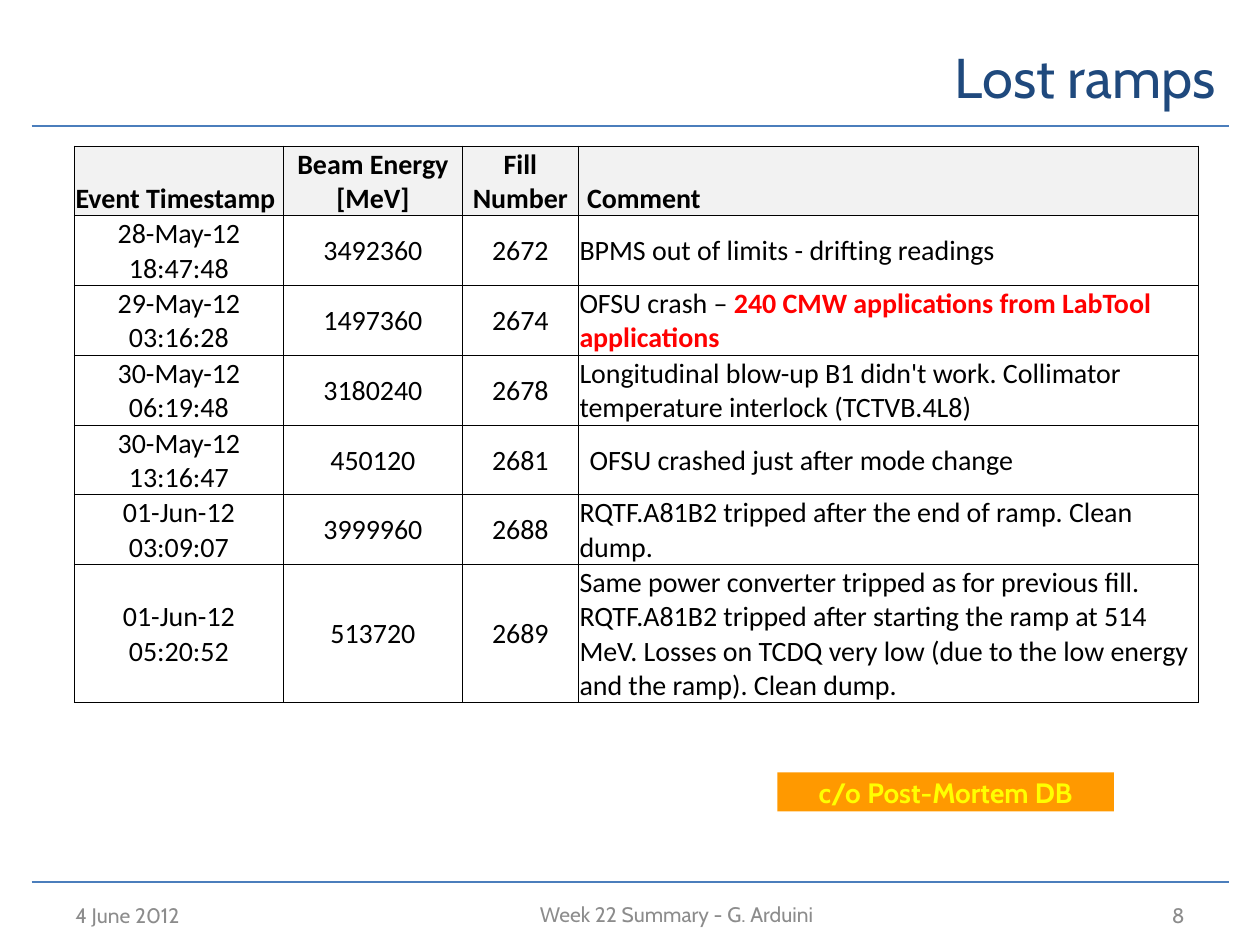
"""Builds the Lost ramps slide: a table of lost beam ramps with a source tag."""
from lxml.etree import SubElement
from pptx import Presentation
from pptx.dml.color import RGBColor as Color
from pptx.enum.shapes import MSO_CONNECTOR as Connector, MSO_SHAPE as Shape
from pptx.enum.text import MSO_ANCHOR as Anchor, PP_ALIGN as Align
from pptx.oxml import parse_xml
from pptx.oxml.ns import nsdecls, qn
from pptx.util import Inches, Pt

COLORS = {"title": "1F497D", "rule": "4B7EBC", "footer": "8C8C8C", "tag": "FF9900",
          "tag_text": "FFFF00", "header": "F2F2F2", "text": "000000", "alert": "FF0000"}
COLUMNS = [1.66, 1.42, 0.92, 4.92]
ROWS = [0.55] * 6 + [1.09]
HEADINGS = ["Event Timestamp", "Beam Energy [MeV]", "Fill Number", "Comment"]
EVENTS = [
    ["28-May-12 18:47:48", "3492360", "2672", "BPMS out of limits - drifting readings"],
    ["29-May-12 03:16:28", "1497360", "2674", "OFSU crash – "],
    ["30-May-12 06:19:48", "3180240", "2678",
     "Longitudinal blow-up B1 didn't work. Collimator temperature interlock (TCTVB.4L8)"],
    ["30-May-12 13:16:47", "450120", "2681", "OFSU crashed just after mode change"],
    ["01-Jun-12 03:09:07", "3999960", "2688",
     "RQTF.A81B2 tripped after the end of ramp. Clean dump."],
    ["01-Jun-12 05:20:52", "513720", "2689",
     "Same power converter tripped as for previous fill. RQTF.A81B2 tripped after starting "
     "the ramp at 514 MeV. Losses on TCDQ very low (due to the low energy and the ramp). "
     "Clean dump."],
]
ALERT = "240 CMW applications from LabTool applications"
INDENTS = {(0, 3): 0.07, (4, 3): 0.09}


def style(span, size, face, color, bold=False):
    """Format one run."""
    span.font.size, span.font.name, span.font.bold = Pt(size), face, bold
    span.font.color.rgb = Color.from_string(COLORS[color])


def write(box, text, size, color, align, bold=False):
    """Put one formatted line into a shape, centred vertically."""
    frame = box.text_frame
    frame.word_wrap = True
    frame.vertical_anchor = Anchor.MIDDLE
    frame.margin_top = frame.margin_bottom = 0
    para = frame.paragraphs[0]
    para.text, para.alignment = text, align
    style(para.runs[0], size, "Cabin", color, bold)


deck = Presentation()
deck.slide_width, deck.slide_height = Inches(10), Inches(7.5)
page = deck.slides.add_slide(deck.slide_layouts[6])

for height in (1, 7):
    rule = page.shapes.add_connector(
        Connector.STRAIGHT, Inches(0.25), Inches(height), Inches(9.75), Inches(height))
    rule.line.color.rgb = Color.from_string(COLORS["rule"])
    rule.line.width = Pt(1.5)
    SubElement(rule._element.spPr, qn("a:effectLst"))

table = page.shapes.add_table(
    len(ROWS), len(COLUMNS), Inches(0.59), Inches(1.16),
    Inches(sum(COLUMNS)), Inches(sum(ROWS))).table
for column, width in zip(table.columns, COLUMNS):
    column.width = Inches(width)
for row, height in zip(table.rows, ROWS):
    row.height = Inches(height)

for r, record in enumerate([HEADINGS] + EVENTS):
    for c, text in enumerate(record):
        cell = table.cell(r, c)
        cell.margin_left = Inches(INDENTS.get((r, c), 0.01))
        cell.margin_right = cell.margin_top = Inches(0.01)
        cell.margin_bottom = 0
        cell.vertical_anchor = Anchor.MIDDLE if r else Anchor.BOTTOM
        for side in ("lnL", "lnR", "lnT", "lnB"):
            cell._tc.get_or_add_tcPr().append(parse_xml(
                f'<a:{side} {nsdecls("a")} w="{Pt(0.5)}"><a:solidFill>'
                f'<a:srgbClr val="{COLORS["text"]}"/></a:solidFill></a:{side}>'))
        if r:
            cell.fill.background()
        else:
            cell.fill.solid()
            cell.fill.fore_color.rgb = Color.from_string(COLORS["header"])
        para = cell.text_frame.paragraphs[0]
        para.text = text
        para.alignment = Align.CENTER if c in (1, 2) or (r and c == 0) else Align.LEFT
        style(para.runs[0], 16, "Calibri", "text", r == 0)

alert = table.cell(2, 3).text_frame.paragraphs[0].add_run()
alert.text = ALERT
style(alert, 16, "Calibri", "alert", True)

for text, left, top, width, height, size, color, align in [
    ("Lost ramps", 1.75, 0.17, 8, 0.87, 32, "title", Align.RIGHT),
    ("4 June 2012", 0.5, 7.17, 2.33, 0.18, 12, "footer", Align.LEFT),
    ("Week 22 Summary - G. Arduini", 1.83, 7.17, 7.08, 0.17, 12, "footer", Align.CENTER),
    ("8", 7.17, 7.17, 2.33, 0.18, 12, "footer", Align.RIGHT),
]:
    box = page.shapes.add_textbox(Inches(left), Inches(top), Inches(width), Inches(height))
    write(box, text, size, color, align)

tag = page.shapes.add_shape(
    Shape.RECTANGLE, Inches(6.17), Inches(6.13), Inches(2.67), Inches(0.31))
tag.shadow.inherit = False
tag.fill.solid()
tag.fill.fore_color.rgb = Color.from_string(COLORS["tag"])
tag.line.fill.background()
write(tag, "c/o Post-Mortem DB", 16, "tag_text", Align.CENTER, True)

deck.save("out.pptx")
